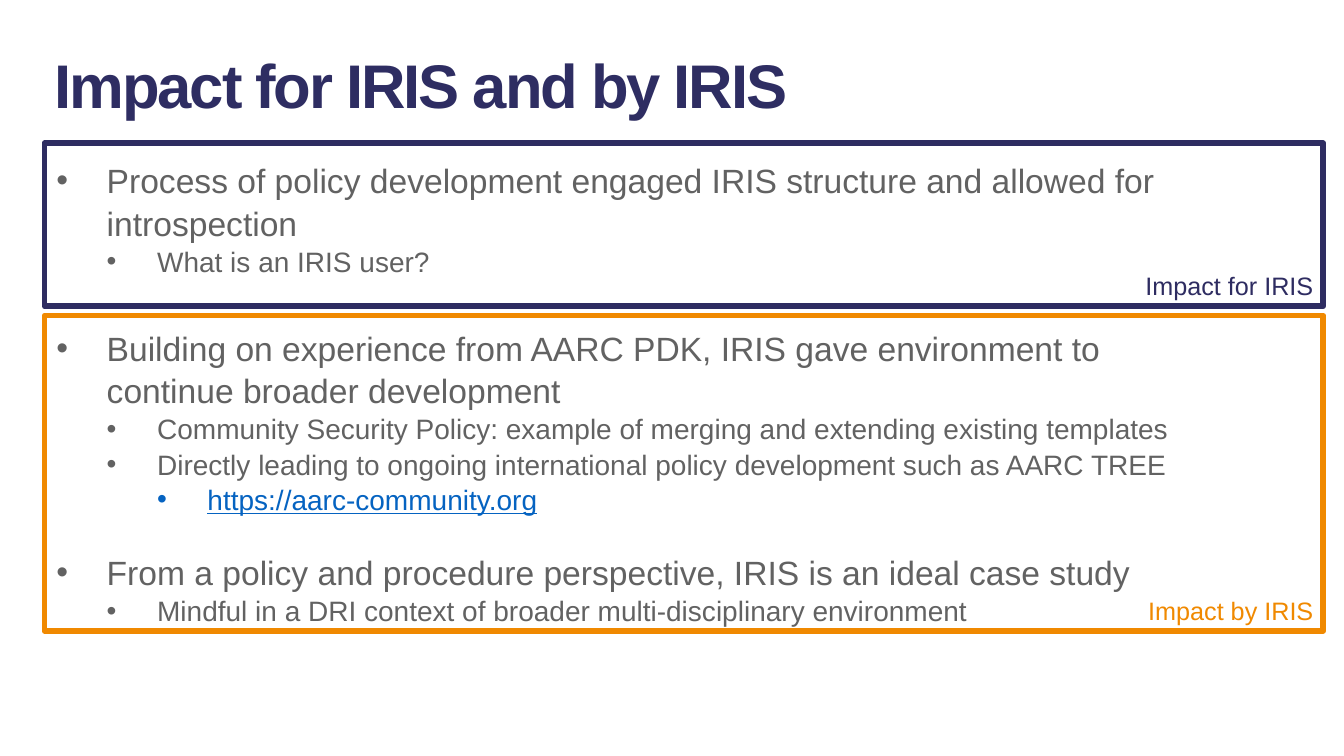
"""Build the slide on the impact for IRIS and by IRIS."""
from dataclasses import dataclass

from lxml import etree
from pptx import Presentation
from pptx.dml.color import RGBColor
from pptx.enum.shapes import MSO_SHAPE
from pptx.enum.text import MSO_ANCHOR, MSO_AUTO_SIZE, PP_ALIGN
from pptx.oxml.ns import qn
from pptx.slide import Slide
from pptx.text.text import _Paragraph, _Run
from pptx.util import Cm, Pt

RECTANGLE = MSO_SHAPE.RECTANGLE
TOP, BOTTOM = MSO_ANCHOR.TOP, MSO_ANCHOR.BOTTOM
LEFT, RIGHT = PP_ALIGN.LEFT, PP_ALIGN.RIGHT
NO_AUTOFIT = MSO_AUTO_SIZE.NONE
TITLE_ONLY = 5


@dataclass(frozen=True)
class Theme:
    """Colours, type sizes and spacing of the slide."""
    font: str = "Arial"
    title_colour: str = "2E2D62"
    navy: str = "2E2C61"
    orange: str = "F08900"
    grey: str = "626262"
    link: str = "0563C1"
    title_size: int = 44
    level_sizes: tuple[int, ...] = (24, 20, 20)
    label_size: int = 18
    title_tracking: int = -150
    line_spacing: float = 1.05
    frame_width: int = 4
    indent: float = 1.27


@dataclass(frozen=True)
class Bullet:
    """One bulleted line, with its level and the gap above in points."""
    text: str
    level: int = 0
    space_before: int = 0
    is_link: bool = False


@dataclass(frozen=True)
class Frame:
    """An outlined area with a label in its lower right corner."""
    label: str
    colour: str
    top: float
    height: float


THEME = Theme()
TITLE = "Impact for IRIS and by IRIS"
BULLETS = (
    Bullet("Process of policy development engaged IRIS structure and allowed for introspection"),
    Bullet("What is an IRIS user?", 1),
    Bullet("Building on experience from AARC PDK, IRIS gave environment to "
           "continue broader development", space_before=34),
    Bullet("Community Security Policy: example of merging and extending existing templates", 1),
    Bullet("Directly leading to ongoing international policy development such as AARC TREE", 1),
    Bullet("https://aarc-community.org", 2, is_link=True),
    Bullet("From a policy and procedure perspective, IRIS is an ideal case study", space_before=24),
    Bullet("Mindful in a DRI context of broader multi-disciplinary environment", 1),
)
FRAMES = (
    Frame("Impact for IRIS", THEME.navy, 3.61, 4.11),
    Frame("Impact by IRIS", THEME.orange, 7.95, 7.95),
)


def format_run(run: _Run, size: int, colour: str) -> None:
    """Set the font, size and colour of a run."""
    run.font.name = THEME.font
    run.font.size = Pt(size)
    run.font.color.rgb = RGBColor.from_string(colour)


def add_bullet_mark(paragraph: _Paragraph, level: int) -> None:
    """Give a paragraph a hanging bullet at its level."""
    properties = paragraph._p.get_or_add_pPr()
    properties.set("marL", str(Cm(THEME.indent * (level + 1))))
    properties.set("indent", str(-Cm(THEME.indent)))
    etree.SubElement(properties, qn("a:buFont")).set("typeface", THEME.font)
    etree.SubElement(properties, qn("a:buChar")).set("char", "•")


def draw_title(slide: Slide) -> None:
    """Place and format the title."""
    title = slide.shapes.title
    title.left, title.top, title.width, title.height = Cm(1.12), Cm(0.97), Cm(20.4), Cm(2.13)
    text_frame = title.text_frame
    text_frame.text = TITLE
    text_frame.auto_size = NO_AUTOFIT
    text_frame.vertical_anchor = TOP
    paragraph = text_frame.paragraphs[0]
    paragraph.alignment = LEFT
    paragraph.line_spacing = THEME.line_spacing
    paragraph.space_before = Pt(0)
    run = paragraph.runs[0]
    format_run(run, THEME.title_size, THEME.title_colour)
    run.font.bold = True
    run._r.get_or_add_rPr().set("spc", str(THEME.title_tracking))


def draw_bullets(slide: Slide) -> None:
    """Write the bulleted text."""
    box = slide.shapes.add_textbox(Cm(1.17), Cm(3.86), Cm(29.77), Cm(11.89))
    text_frame = box.text_frame
    text_frame.word_wrap = True
    text_frame.text = "\n".join(bullet.text for bullet in BULLETS)
    for paragraph, bullet in zip(text_frame.paragraphs, BULLETS):
        paragraph.level = bullet.level
        add_bullet_mark(paragraph, bullet.level)
        paragraph.line_spacing = THEME.line_spacing
        paragraph.space_before = Pt(bullet.space_before)
        run = paragraph.runs[0]
        colour = THEME.link if bullet.is_link else THEME.grey
        format_run(run, THEME.level_sizes[bullet.level], colour)
        if bullet.is_link:
            run.font.underline = True


def draw_frame(slide: Slide, frame: Frame) -> None:
    """Draw one outlined area and its label."""
    shape = slide.shapes.add_shape(
        RECTANGLE, Cm(1.12), Cm(frame.top), Cm(32.23), Cm(frame.height))
    shape.shadow.inherit = False
    shape.fill.background()
    shape.line.color.rgb = RGBColor.from_string(frame.colour)
    shape.line.width = Pt(THEME.frame_width)
    text_frame = shape.text_frame
    text_frame.text = frame.label
    text_frame.vertical_anchor = BOTTOM
    text_frame.margin_bottom = Cm(0.14)
    paragraph = text_frame.paragraphs[0]
    paragraph.alignment = RIGHT
    format_run(paragraph.runs[0], THEME.label_size, frame.colour)


def main() -> None:
    """Build and save the presentation."""
    presentation = Presentation()
    presentation.slide_width, presentation.slide_height = Cm(33.87), Cm(19.05)
    slide = presentation.slides.add_slide(presentation.slide_layouts[TITLE_ONLY])
    draw_bullets(slide)
    draw_title(slide)
    for frame in FRAMES:
        draw_frame(slide, frame)
    presentation.save("out.pptx")


if __name__ == "__main__":
    main()
